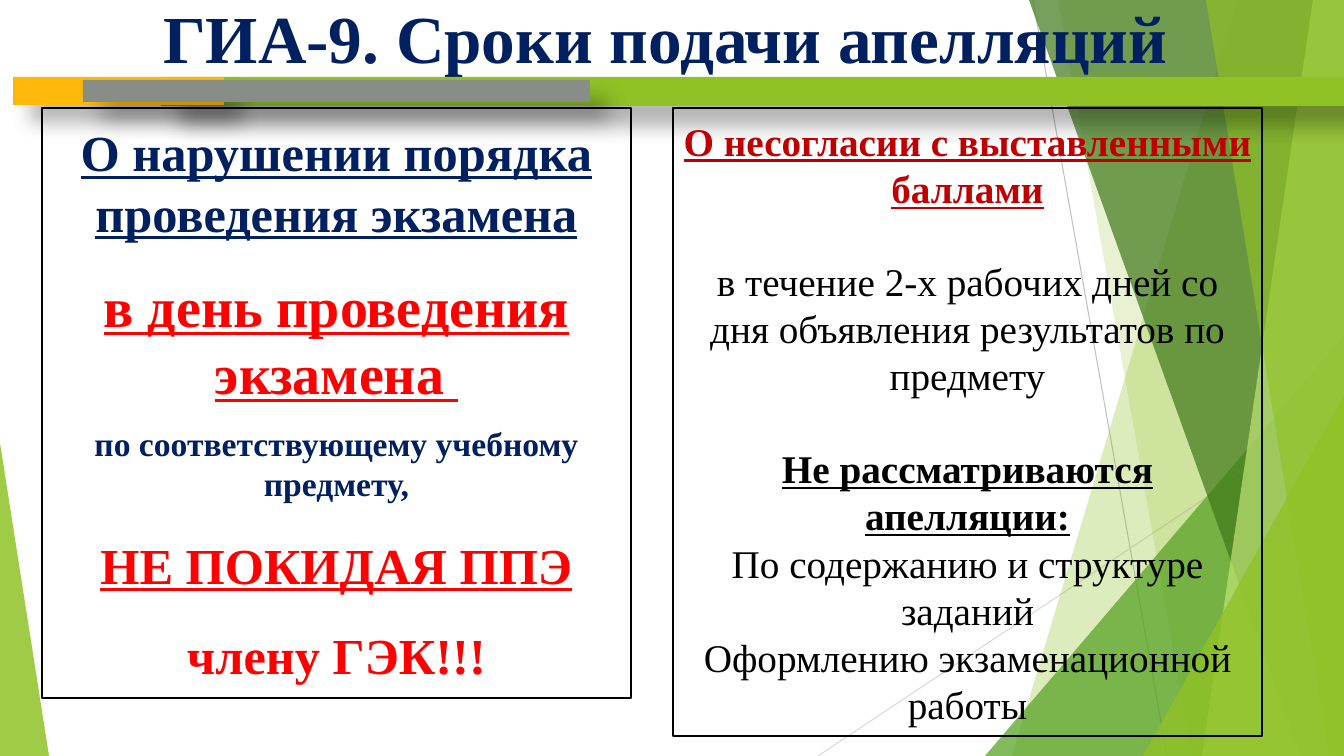
import pptx
import pptx.dml.color
import pptx.enum.shapes
import pptx.enum.text
import pptx.oxml
import pptx.oxml.ns
import pptx.util
from lxml import etree

RGBColor = pptx.dml.color.RGBColor
ShapeType = pptx.enum.shapes.MSO_SHAPE
Anchor = pptx.enum.text.MSO_ANCHOR

PX = 914400 / 100.8
WIDTH, HEIGHT = 1344, 756
FONT = "Times New Roman"

NAVY = RGBColor(0x00, 0x20, 0x60)
RED = RGBColor(0xFF, 0x00, 0x00)
DARK_RED = RGBColor(0xC0, 0x00, 0x00)
BLACK = RGBColor(0x00, 0x00, 0x00)
LIME = RGBColor(0x90, 0xC2, 0x26)
PALE_LIME = RGBColor(0xC0, 0xE4, 0x74)
GREEN = RGBColor(0x54, 0xA0, 0x21)
DARK_GREEN = RGBColor(0x3F, 0x78, 0x19)
AMBER = RGBColor(0xFE, 0xB8, 0x0A)
GRAY = RGBColor(0x88, 0x8D, 0x87)
LINE_GRAY = RGBColor(0xBF, 0xBF, 0xBF)
LINE_LIGHT = RGBColor(0xD9, 0xD9, 0xD9)

# Content
TITLE = "ГИА-9. Сроки подачи апелляций"

VIOLATION = [
    ("О нарушении порядка проведения экзамена",
     dict(size=36, color=NAVY, bold=True, underline=True)),
    ("в день проведения экзамена ",
     dict(size=40, color=RED, bold=True, underline=True, before=21)),
    ("по соответствующему учебному предмету,",
     dict(size=24, color=NAVY, bold=True, before=12)),
    ("НЕ ПОКИДАЯ ППЭ",
     dict(size=36, color=RED, bold=True, underline=True, spacing=1.5)),
    ("члену ГЭК!!!", dict(size=36, color=RED, bold=True, spacing=1.5)),
]
DISAGREEMENT = [
    ("О несогласии с выставленными баллами",
     dict(color=DARK_RED, bold=True, underline=True)),
    ("в течение 2-х рабочих дней со дня объявления результатов по предмету",
     dict(before=33)),
    ("Не рассматриваются апелляции:",
     dict(bold=True, underline=True, before=33)),
    ("По содержанию и структуре заданий", {}),
    ("Оформлению экзаменационной работы", {}),
]

# left, top, width, height, paragraphs
PANELS = [
    (42, 108, 589, 590, VIOLATION),
    (673, 108, 589, 628, DISAGREEMENT),
]
BARS = [
    (161, 77, 1183, 29, LIME),
    (13, 77, 211, 28, AMBER),
    (83, 80, 507, 22, GRAY),
]
RAYS = [
    (1033, 0, 1167, HEIGHT, LINE_GRAY),
    (WIDTH, 406, 818, HEIGHT, LINE_LIGHT),
]
# Facets reach the right edge: ("facet", top x, bottom x, colour, opacity)
# Triangles: ("triangle", left, top, width, apex, colour, opacity)
DECORATIONS = [
    ("facet", 1238, 1012, LIME, 30),
    ("facet", 1058, 1192, LIME, 20),
    ("triangle", 985, 336, 359, 1, GREEN, 72),
    ("facet", 1029, 1301, DARK_GREEN, 70),
    ("facet", 1313, 1202, PALE_LIME, 70),
    ("facet", 1206, 1329, LIME, 65),
    ("triangle", 1143, 396, 201, 1, LIME, 80),
    ("triangle", 0, 443, 49, 0, LIME, 85),
]


def px(value):
    return pptx.util.Emu(round(value * PX))


def add_child(parent, tag, **attributes):
    child = etree.SubElement(parent, pptx.oxml.ns.qn(tag))
    for name, value in attributes.items():
        child.set(name, str(value))
    return child


def paint(shape, color, opacity=100):
    shape.shadow.inherit = False
    shape.line.fill.background()
    shape.fill.solid()
    shape.fill.fore_color.rgb = color
    if opacity < 100:
        tint = shape._element.spPr.find(".//" + pptx.oxml.ns.qn("a:srgbClr"))
        add_child(tint, "a:alpha", val=opacity * 1000)


def add_preset(slide, kind, left, top, width, height):
    return slide.shapes.add_shape(kind, px(left), px(top), px(width), px(height))


def write(paragraph, text, size=28, color=BLACK, bold=False, underline=False,
          before=0, spacing=None):
    paragraph.alignment = pptx.enum.text.PP_ALIGN.CENTER
    paragraph.space_before = pptx.util.Pt(before)
    if spacing:
        paragraph.line_spacing = spacing
    run = paragraph.add_run()
    run.text = text
    run.font.name = FONT
    run.font.size = pptx.util.Pt(size)
    run.font.color.rgb = color
    run.font.bold = bold
    run.font.underline = underline
    return run


def add_decorations(slide):
    for x1, y1, x2, y2, color in RAYS:
        ray = slide.shapes.add_connector(
            pptx.enum.shapes.MSO_CONNECTOR.STRAIGHT, px(x1), px(y1), px(x2), px(y2))
        ray.line.color.rgb = color
        ray.line.width = pptx.util.Pt(0.75)
        add_child(ray._element.spPr, "a:effectLst")
    for kind, *geometry, color, opacity in DECORATIONS:
        if kind == "facet":
            top_x, bottom_x = geometry
            builder = slide.shapes.build_freeform(top_x, 0, scale=PX)
            builder.add_line_segments(
                [(WIDTH, 0), (WIDTH, HEIGHT), (bottom_x, HEIGHT)], close=True)
            shape = builder.convert_to_shape()
        else:
            left, top, width, apex = geometry
            shape = add_preset(slide, ShapeType.ISOSCELES_TRIANGLE,
                               left, top, width, HEIGHT - top)
            shape.adjustments[0] = apex
        paint(shape, color, opacity)


def add_title(slide):
    title = slide.shapes.title
    slide.shapes._spTree.append(title._element)
    title.left, title.top, title.width, title.height = map(px, (113, 3, 1105, 80))
    frame = title.text_frame
    frame.word_wrap = True
    frame.auto_size = pptx.enum.text.MSO_AUTO_SIZE.NONE
    frame.vertical_anchor = Anchor.BOTTOM
    frame.margin_left = frame.margin_right = 0
    frame.margin_top = frame.margin_bottom = px(5)
    write(frame.paragraphs[0], TITLE, size=48, color=NAVY, bold=True, spacing=0.9)


def add_bars(slide):
    for *box, color in BARS:
        bar = add_preset(slide, ShapeType.RECTANGLE, *box)
        paint(bar, color)
        effects = bar._element.spPr.find(pptx.oxml.ns.qn("a:effectLst"))
        shadow = add_child(effects, "a:outerShdw", blurRad=pptx.util.Pt(15),
                           dist=pptx.util.Pt(18), dir=45 * 60000,
                           algn="tl", rotWithShape=0)
        shade = add_child(shadow, "a:srgbClr", val=BLACK)
        add_child(shade, "a:alpha", val=30000)


def add_panels(slide):
    for *box, paragraphs in PANELS:
        panel = add_preset(slide, ShapeType.RECTANGLE, *box)
        panel.shadow.inherit = False
        panel.fill.background()
        panel.line.color.rgb = BLACK
        panel.line.width = pptx.util.Pt(1.5)
        frame = panel.text_frame
        frame.word_wrap = True
        frame.vertical_anchor = Anchor.MIDDLE
        for index, (text, style) in enumerate(paragraphs):
            paragraph = frame.add_paragraph() if index else frame.paragraphs[0]
            write(paragraph, text, **style)


def main():
    presentation = pptx.Presentation()
    presentation.slide_width, presentation.slide_height = px(WIDTH), px(HEIGHT)
    slide = presentation.slides.add_slide(presentation.slide_layouts[5])
    add_decorations(slide)
    add_title(slide)
    add_bars(slide)
    add_panels(slide)
    presentation.save("out.pptx")


if __name__ == "__main__":
    main()
